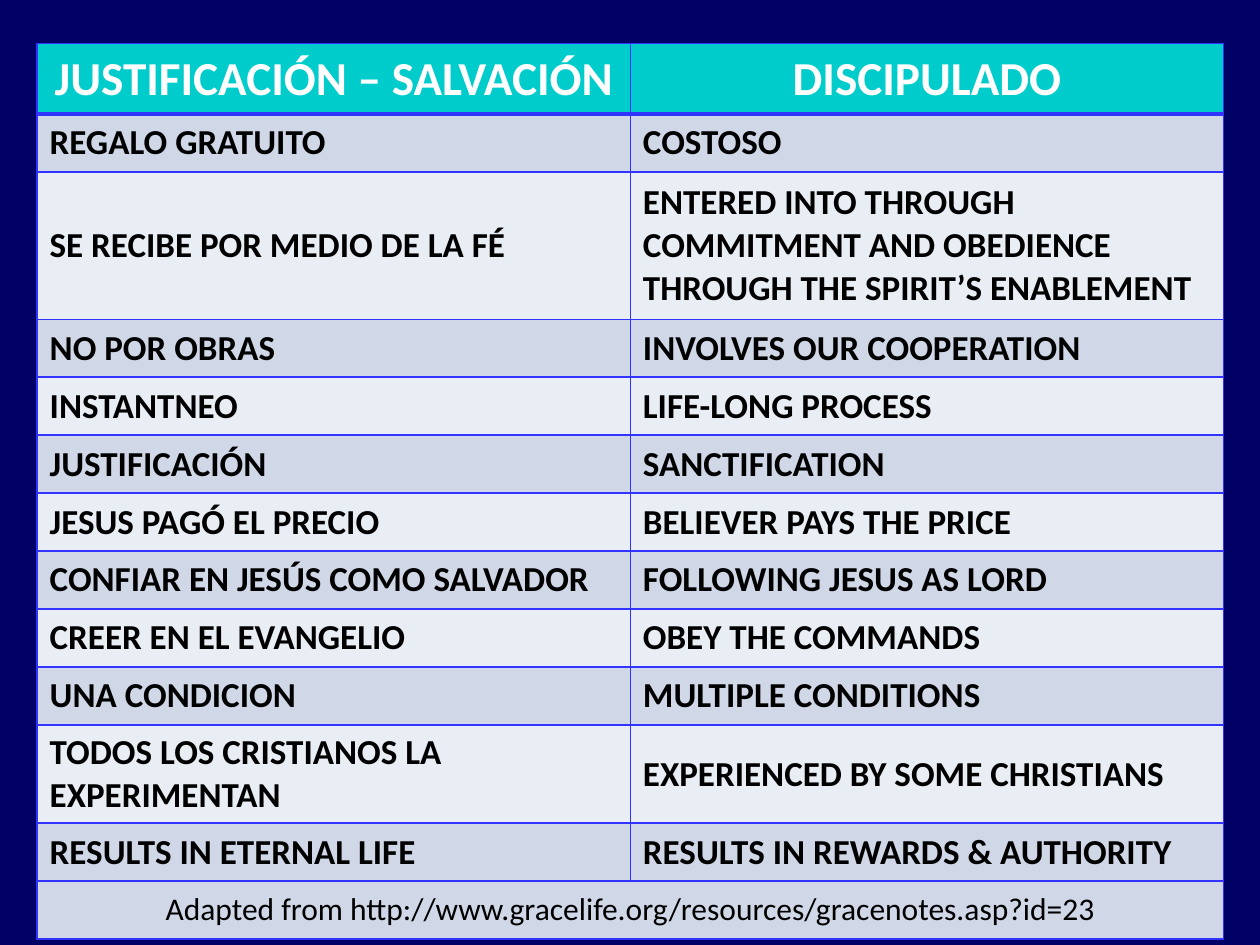
from lxml import etree
from pptx import Presentation
from pptx.dml.color import RGBColor
from pptx.enum import text
from pptx.oxml import ns
from pptx.util import Pt

COLORS = {
    "background": "000066",
    "header": "00CCCC",
    "header text": "FFFFFF",
    "body text": "000000",
    "dark band": "D0D8E8",
    "light band": "E9EDF4",
    "border": "3333FF",
}
HEADINGS = ("JUSTIFICACIÓN – SALVACIÓN", "DISCIPULADO")
CONTRASTS = [
    ("REGALO GRATUITO", "COSTOSO"),
    ("SE RECIBE POR MEDIO DE LA FÉ",
     "ENTERED INTO THROUGH COMMITMENT AND OBEDIENCE THROUGH THE SPIRIT’S ENABLEMENT"),
    ("NO POR OBRAS", "INVOLVES OUR COOPERATION"),
    ("INSTANTNEO", "LIFE-LONG PROCESS"),
    ("JUSTIFICACIÓN", "SANCTIFICATION"),
    ("JESUS PAGÓ EL PRECIO", "BELIEVER PAYS THE PRICE"),
    ("CONFIAR EN JESÚS COMO SALVADOR", "FOLLOWING JESUS AS LORD"),
    ("CREER EN EL EVANGELIO", "OBEY THE COMMANDS"),
    ("UNA CONDICION", "MULTIPLE CONDITIONS"),
    ("TODOS LOS CRISTIANOS LA EXPERIMENTAN", "EXPERIENCED BY SOME CHRISTIANS"),
    ("RESULTS IN ETERNAL LIFE", "RESULTS IN REWARDS & AUTHORITY"),
]
SOURCE = "Adapted from http://www.gracelife.org/resources/gracenotes.asp?id=23"
HEADER_HEIGHT, ROW_HEIGHT = 40, 33.12
TALL_ROWS = {2: 84.24, 10: 56}
COLUMN_WIDTH = 339


def write_text(cell, content, size=20, bold=True, color="body text", align=None):
    cell.vertical_anchor = text.MSO_ANCHOR.MIDDLE
    paragraph = cell.text_frame.paragraphs[0]
    paragraph.alignment = align
    run = paragraph.add_run()
    run.text = content
    run.font.name = "Calibri"
    run.font.size = Pt(size)
    run.font.bold = bold
    run.font.color.rgb = RGBColor.from_string(COLORS[color])


def draw_borders(cell, top=1, bottom=1):
    properties = cell._tc.get_or_add_tcPr()
    for side, width in (("L", 1), ("R", 1), ("T", top), ("B", bottom)):
        line = etree.SubElement(properties, ns.qn(f"a:ln{side}"), w=str(Pt(width)))
        fill = etree.SubElement(line, ns.qn("a:solidFill"))
        etree.SubElement(fill, ns.qn("a:srgbClr"), val=COLORS["border"])


presentation = Presentation()
presentation.slide_width, presentation.slide_height = Pt(720), Pt(540)
slide = presentation.slides.add_slide(presentation.slide_layouts[6])
slide.background.fill.solid()
slide.background.fill.fore_color.rgb = RGBColor.from_string(COLORS["background"])

# Table grid
row_count = len(CONTRASTS) + 2
heights = [HEADER_HEIGHT] + [TALL_ROWS.get(i, ROW_HEIGHT) for i in range(1, row_count)]
table = slide.shapes.add_table(row_count, 2, Pt(21.2), Pt(25), Pt(2 * COLUMN_WIDTH),
                               Pt(sum(heights))).table
for column in table.columns:
    column.width = Pt(COLUMN_WIDTH)
for row, height in zip(table.rows, heights):
    row.height = Pt(height)

# Borders and bands
for i, row in enumerate(table.rows):
    if i == 0:
        band = "header"
    elif i % 2 or i == row_count - 1:
        band = "dark band"
    else:
        band = "light band"
    for cell in row.cells:
        draw_borders(cell, top=3 if i == 1 else 1, bottom=3 if i == 0 else 1)
        cell.fill.solid()
        cell.fill.fore_color.rgb = RGBColor.from_string(COLORS[band])

# Headings and contrasts
for j, heading in enumerate(HEADINGS):
    write_text(table.cell(0, j), heading, size=27, color="header text",
               align=text.PP_ALIGN.CENTER)
for i, contrast in enumerate(CONTRASTS, start=1):
    for j, content in enumerate(contrast):
        write_text(table.cell(i, j), content)

# Source row across both columns
source_cell = table.cell(row_count - 1, 0)
source_cell.merge(table.cell(row_count - 1, 1))
write_text(source_cell, SOURCE, size=18, bold=False, align=text.PP_ALIGN.CENTER)

presentation.save("out.pptx")
